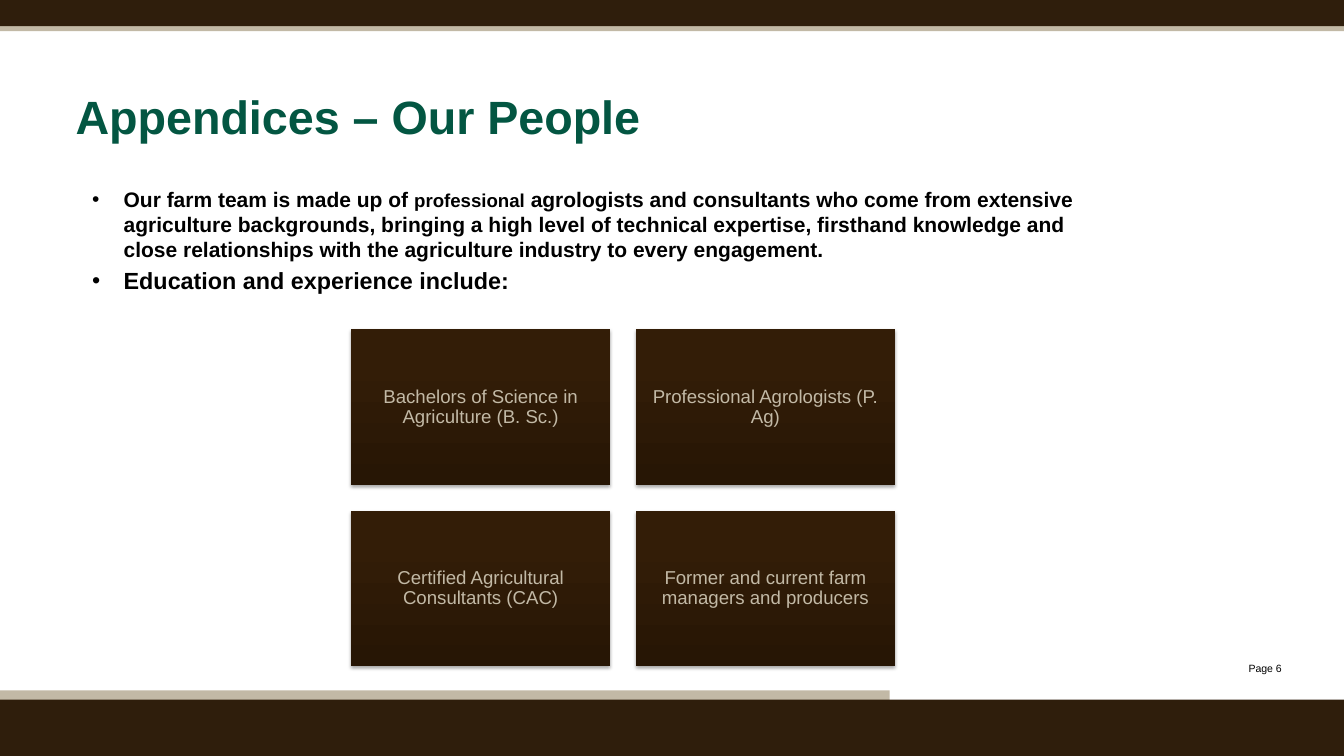
from pptx import Presentation
from pptx.dml.color import RGBColor
from pptx.enum.shapes import MSO_SHAPE
from pptx.enum.text import MSO_ANCHOR, MSO_AUTO_SIZE, PP_ALIGN
from pptx.oxml import parse_xml
from pptx.oxml.ns import nsdecls
from pptx.util import Cm, Pt

BROWN = RGBColor(0x2F, 0x1E, 0x0C)
SAND = RGBColor(0xC2, 0xB9, 0xA6)
GREEN = RGBColor(0x03, 0x56, 0x42)
BLACK = RGBColor(0, 0, 0)
CARD_STOPS = [(0, "271605"), (80, "331D07"), (100, "341D06")]


class PeopleSlide:
    """Holds the style and the current slide."""

    font_name = "Arial"

    def __init__(self, presentation):
        self.slide = presentation.slides.add_slide(presentation.slide_layouts[5])
        self.shapes = self.slide.shapes

    def style(self, font, size, color, bold=False):
        font.name, font.size, font.bold = self.font_name, Pt(size), bold
        font.color.rgb = color

    def rectangle(self, left, top, width, height):
        rect = self.shapes.add_shape(
            MSO_SHAPE.RECTANGLE, Cm(left), Cm(top), Cm(width), Cm(height))
        rect.shadow.inherit = False
        rect.line.fill.background()
        return rect

    def band(self, top, width, height, color):
        band = self.rectangle(0, top, width, height)
        band.fill.solid()
        band.fill.fore_color.rgb = color

    def title(self, text, left, top, width, height):
        title = self.shapes.title
        title.left, title.top = Cm(left), Cm(top)
        title.width, title.height = Cm(width), Cm(height)
        frame = title.text_frame
        frame.text = text
        frame.auto_size = MSO_AUTO_SIZE.NONE
        frame.vertical_anchor = MSO_ANCHOR.MIDDLE
        heading = frame.paragraphs[0]
        heading.alignment = PP_ALIGN.LEFT
        self.style(heading.runs[0].font, 40, GREEN, bold=True)

    def text_box(self, left, top, width, height):
        frame = self.shapes.add_textbox(
            Cm(left), Cm(top), Cm(width), Cm(height)).text_frame
        frame.word_wrap = True
        return frame

    def bullets(self, items, left, top, width, height):
        """Each item is a list of (text, size) runs."""
        frame = self.text_box(left, top, width, height)
        for number, item in enumerate(items):
            bullet = frame.add_paragraph() if number else frame.paragraphs[0]
            props = bullet._p.get_or_add_pPr()
            props.set("marL", str(Cm(0.95)))
            props.set("indent", str(-Cm(0.95)))
            props.append(parse_xml(f'<a:buFont {nsdecls("a")} typeface="Arial"/>'))
            props.append(parse_xml(f'<a:buChar {nsdecls("a")} char="•"/>'))
            if number:
                bullet.space_before = Pt(4)
            for text, size in item:
                run = bullet.add_run()
                run.text = text
                self.style(run.font, size, BLACK, bold=True)

    def page_number(self, text, left, top, width, height):
        frame = self.text_box(left, top, width, height)
        frame.text = text
        frame.paragraphs[0].alignment = PP_ALIGN.RIGHT
        self.style(frame.paragraphs[0].runs[0].font, 9, BLACK)

    def card(self, text, left, top, width, height):
        card = self.rectangle(left, top, width, height)
        # Gradient running upwards, and a soft shadow below
        stops = "".join(
            f'<a:gs pos="{position * 1000}"><a:srgbClr val="{color}"/></a:gs>'
            for position, color in CARD_STOPS)
        properties = card._element.spPr
        properties.insert(2, parse_xml(
            f'<a:gradFill {nsdecls("a")} rotWithShape="1"><a:gsLst>{stops}</a:gsLst>'
            '<a:lin ang="16200000" scaled="0"/></a:gradFill>'))
        properties[-1].append(parse_xml(
            f'<a:outerShdw {nsdecls("a")} blurRad="{Pt(3.1)}" dist="{Pt(1.8)}" '
            'dir="5400000" rotWithShape="0"><a:srgbClr val="000000">'
            '<a:alpha val="35000"/></a:srgbClr></a:outerShdw>'))
        frame = card.text_frame
        frame.word_wrap = True
        frame.vertical_anchor = MSO_ANCHOR.MIDDLE
        frame.margin_left = frame.margin_right = Cm(0.17)
        frame.margin_top = frame.margin_bottom = Cm(0.17)
        frame.text = text
        label = frame.paragraphs[0]
        label.alignment = PP_ALIGN.CENTER
        label.line_spacing = 0.9
        self.style(label.runs[0].font, 16, SAND)

    def card_grid(self, texts, left, top, width, height, gap, columns=2):
        for number, text in enumerate(texts):
            row, column = divmod(number, columns)
            self.card(text, left + column * (width + gap),
                      top + row * (height + gap), width, height)


def main():
    presentation = Presentation()
    presentation.slide_width, presentation.slide_height = Cm(40.64), Cm(22.86)
    people = PeopleSlide(presentation)

    # Top and bottom bands
    people.band(0.74, 40.64, 0.2, SAND)
    people.band(0, 40.64, 0.79, BROWN)
    people.band(20.88, 26.9, 0.43, SAND)
    people.band(21.16, 40.64, 1.7, BROWN)
    people.page_number("Page 6", 36.27, 19.89, 2.74, 0.64)

    # Title and introduction
    people.title("Appendices – Our People", 2.03, 2.29, 29.13, 2.44)
    people.bullets([
        [("Our farm team is made up of ", 18),
         ("professional", 16),
         (" agrologists and consultants who come from extensive agriculture "
          "backgrounds, bringing a high level of technical expertise, firsthand "
          "knowledge and close relationships with the agriculture industry to "
          "every engagement.", 18)],
        [("Education and experience include:", 20)],
    ], 2.54, 5.51, 31.5, 11.15)

    # Education and experience cards
    people.card_grid([
        "Bachelors of Science in Agriculture (B. Sc.)",
        "Professional Agrologists (P. Ag)",
        "Certified Agricultural Consultants (CAC)",
        "Former and current farm managers and producers",
    ], left=10.62, top=9.96, width=7.83, height=4.7, gap=0.78)

    presentation.save("out.pptx")


if __name__ == "__main__":
    main()
